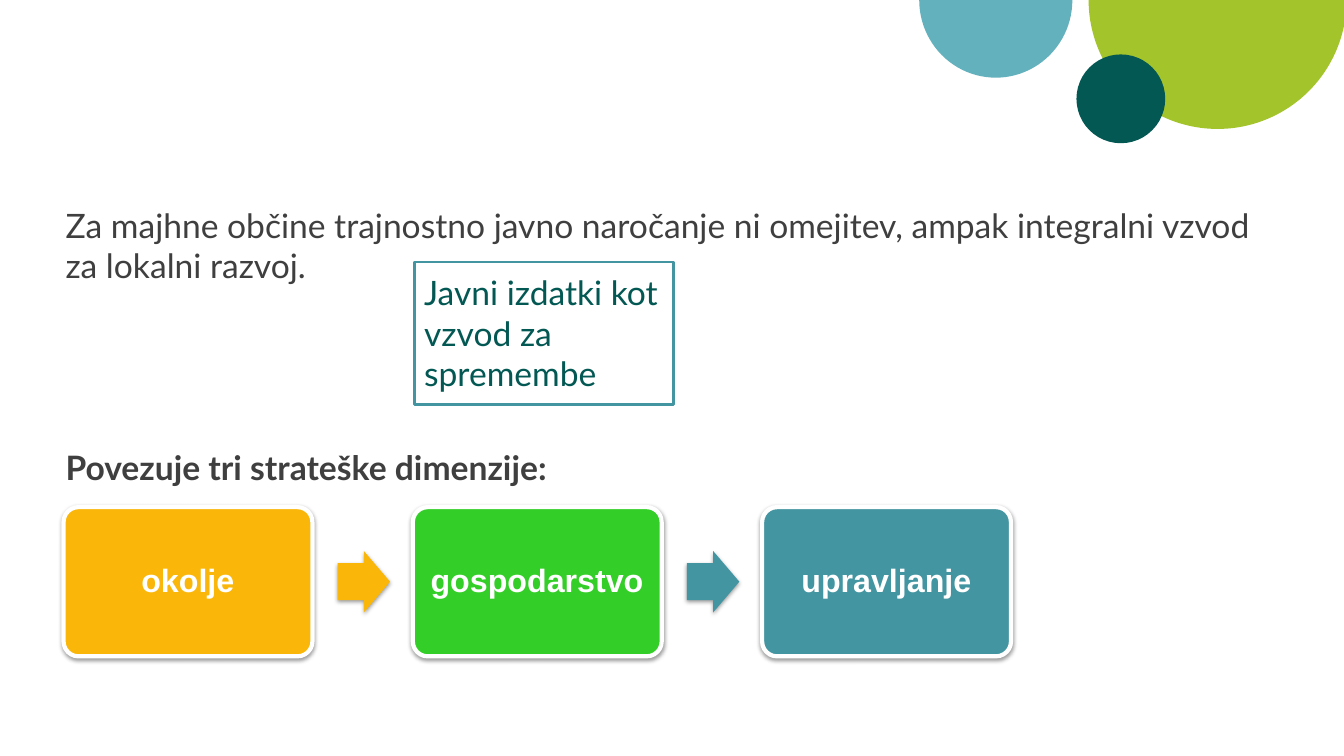
from dataclasses import dataclass

from lxml import etree
from pptx import Presentation
from pptx.dml.color import RGBColor as RGB
from pptx.enum.shapes import MSO_SHAPE as SHAPE
from pptx.enum.text import MSO_ANCHOR as ANCHOR, PP_ALIGN as ALIGN
from pptx.oxml import parse_xml
from pptx.util import Pt


@dataclass(frozen=True)
class Theme:
    white: str = "FFFFFF"
    ink: str = "3F3F3F"
    lime: str = "A3C42A"
    sky: str = "64B1BE"
    pine: str = "035854"
    amber: str = "FAB609"
    green: str = "33CE27"
    teal: str = "4495A2"
    body_font: str = "Lato"
    card_font: str = "Arial"
    body_size: int = 24
    card_size: int = 23


T = Theme()
SHADOW = (
    '<a:effectLst xmlns:a="http://schemas.openxmlformats.org/drawingml/2006/main">'
    '<a:outerShdw blurRad="39370" dist="20320" dir="5400000" rotWithShape="0">'
    '<a:srgbClr val="000000"><a:alpha val="38000"/></a:srgbClr>'
    "</a:outerShdw></a:effectLst>"
)


def set_attrs(obj, values):
    for name, value in values.items():
        setattr(obj, name, value)


def add_shape(s, kind, box, fill, line=None, adj=(), shadow=False):
    sp = s.shapes.add_shape(kind, *map(Pt, box))
    for i, value in enumerate(adj):
        sp.adjustments[i] = value
    sp.fill.solid()
    sp.fill.fore_color.rgb = RGB.from_string(fill)
    if line:
        color, width = line
        sp.line.color.rgb = RGB.from_string(color)
        sp.line.width = Pt(width)
    else:
        sp.line.fill.background()
    sp.shadow.inherit = False
    if shadow:
        sp_pr = sp.fill._xPr
        sp_pr.replace(sp_pr.find("{*}effectLst"), parse_xml(SHADOW))
    return sp


def frame(sp, inset, anchor=ANCHOR.TOP):
    tf = sp.text_frame
    sides = ("margin_left", "margin_top", "margin_right", "margin_bottom")
    set_attrs(tf, {"word_wrap": True, "vertical_anchor": anchor,
                   **dict.fromkeys(sides, Pt(inset))})
    return tf


def write(p, text, font, size, color, bold=False, **layout):
    set_attrs(p, {"alignment": ALIGN.LEFT, **layout})
    r = p.add_run()
    r.text = text
    set_attrs(r.font, {"name": font, "size": Pt(size), "bold": bold})
    r.font.color.rgb = RGB.from_string(color)


def corner_circles(s, x, y):
    half = (0, 108)
    circles = [
        (SHAPE.PIE, (121, -92.2, 184.3, 184.3), T.lime, half),
        (SHAPE.PIE, (0, -55.4, 109.4, 110.9), T.sky, half),
        (SHAPE.OVAL, (112.3, 38.9, 63.4, 63.4), T.pine, ()),
    ]
    for kind, (dx, dy, w, h), fill, adj in circles:
        add_shape(s, kind, (x + dx, y + dy, w, h), fill, adj=adj)


def body_text(s, box):
    tf = frame(s.shapes.add_textbox(*map(Pt, box)), 0)
    write(tf.paragraphs[0],
          "Za majhne občine trajnostno javno naročanje ni omejitev, "
          "ampak integralni vzvod za lokalni razvoj.",
          T.body_font, T.body_size, T.ink)
    write(tf.add_paragraph(), "Povezuje tri strateške dimenzije:",
          T.body_font, T.body_size, T.ink, bold=True, space_before=Pt(115.5))


def dimension_flow(s, box):
    x, y, w, h = box
    card_w, arrow_w, arrow_h = 177.8, 37.4, 43.9
    dimensions = [("okolje", T.amber), ("gospodarstvo", T.green),
                  ("upravljanje", T.teal)]
    arrows = [T.amber, T.teal]
    pitch = (w - card_w) / (len(dimensions) - 1)
    for i, (name, fill) in enumerate(dimensions):
        left = x + i * pitch
        card = add_shape(s, SHAPE.ROUNDED_RECTANGLE, (left, y, card_w, h), fill,
                         line=(T.white, 3), adj=(0.1,), shadow=True)
        tf = frame(card, 7.2, ANCHOR.MIDDLE)
        write(tf.paragraphs[0], name, T.card_font, T.card_size, T.white,
              bold=True, alignment=ALIGN.CENTER, line_spacing=0.9)
        if i < len(arrows):
            spot = (left + card_w + 18, y + (h - arrow_h) / 2, arrow_w, arrow_h)
            add_shape(s, SHAPE.RIGHT_ARROW, spot, arrows[i],
                      adj=(0.6, 0.5), shadow=True)


def callout(s, box):
    sp = add_shape(s, SHAPE.RECTANGLE, box, T.white, line=(T.teal, 2))
    write(frame(sp, 7.2).paragraphs[0], "Javni izdatki kot vzvod za spremembe",
          T.body_font, T.body_size, T.pine)


def main():
    prs = Presentation()
    set_attrs(prs, {"slide_width": Pt(960), "slide_height": Pt(540)})
    s = prs.slides.add_slide(prs.slide_layouts[6])
    corner_circles(s, 656.6, 0)
    body_text(s, (46.8, 146.2, 870.5, 203.8))
    dimension_flow(s, (45.4, 362.2, 676.8, 106.6))
    callout(s, (295.9, 187.2, 185, 101.5))
    prs.save("out.pptx")


if __name__ == "__main__":
    main()
